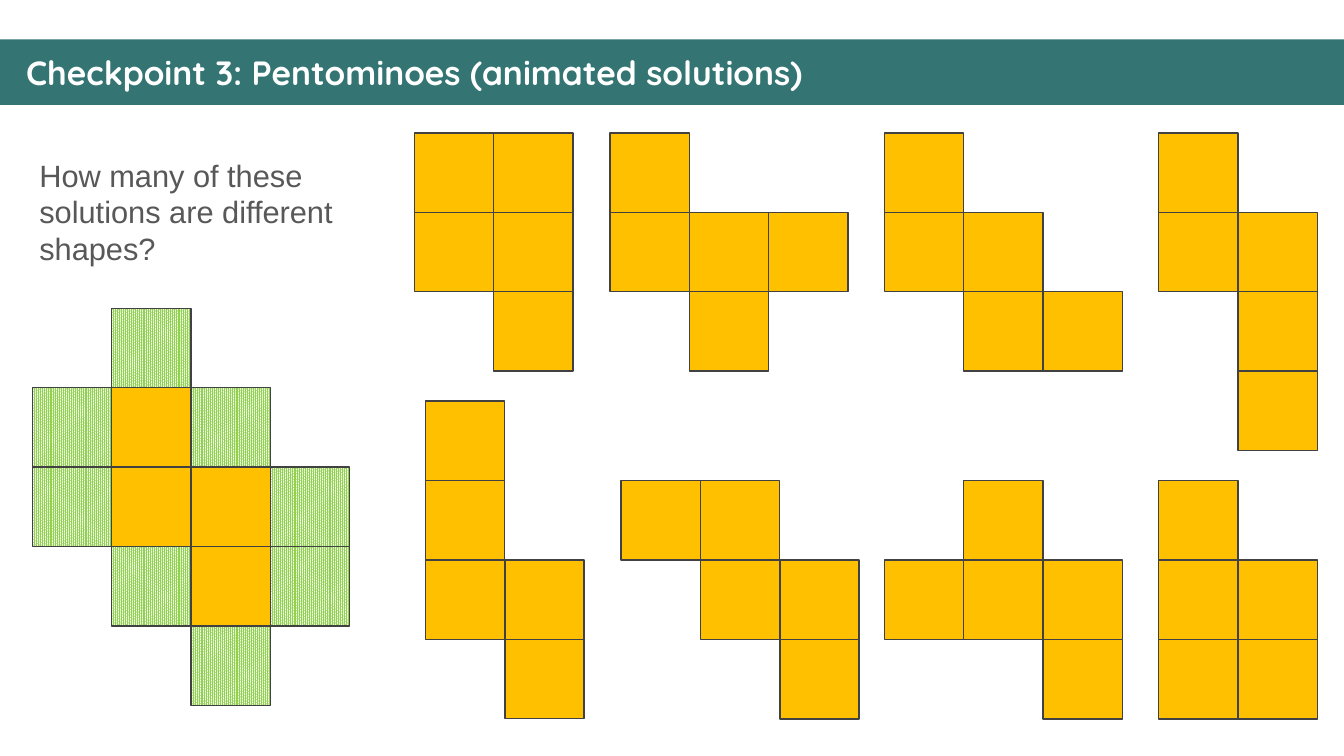
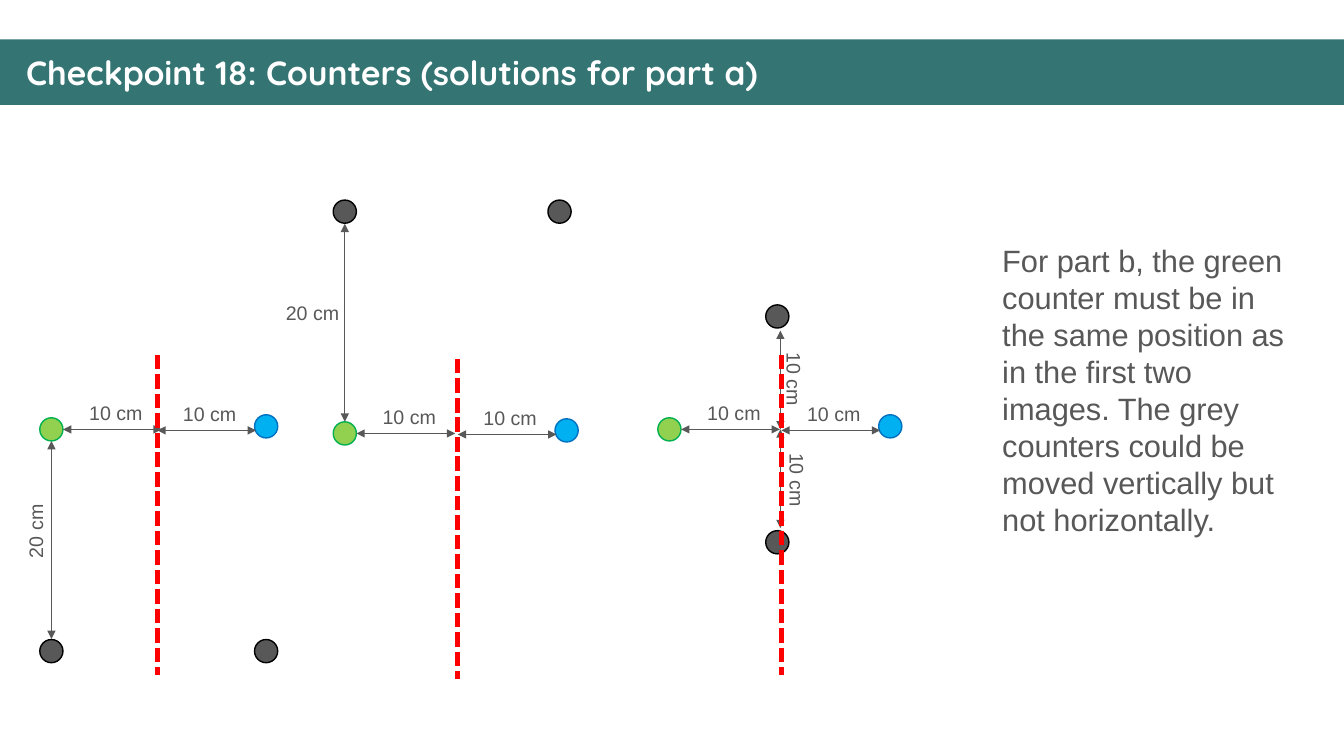
from lxml import etree
from pptx import Presentation
from pptx.dml.color import RGBColor
from pptx.enum.dml import MSO_LINE, MSO_PATTERN
from pptx.enum.shapes import MSO_CONNECTOR, MSO_SHAPE
from pptx.enum.text import MSO_ANCHOR, MSO_AUTO_SIZE, PP_ALIGN
from pptx.oxml.ns import qn
from pptx.util import Cm, Inches, Pt

RECTANGLE, OVAL = MSO_SHAPE.RECTANGLE, MSO_SHAPE.OVAL
STRAIGHT = MSO_CONNECTOR.STRAIGHT
SHORT_DASH = MSO_LINE.SQUARE_DOT
DENSE_DOTS = MSO_PATTERN.PERCENT_90
NO_FIT = MSO_AUTO_SIZE.NONE
MIDDLE, TOP = MSO_ANCHOR.MIDDLE, MSO_ANCHOR.TOP
LEFT, CENTER = PP_ALIGN.LEFT, PP_ALIGN.CENTER

TEAL = RGBColor(0x34, 0x75, 0x74)
WHITE = RGBColor(0xFF, 0xFF, 0xFF)
GREY = RGBColor(0x58, 0x58, 0x58)
BLACK = RGBColor(0x00, 0x00, 0x00)
EDGE = RGBColor(0x41, 0x41, 0x41)
AMBER = RGBColor(0xFF, 0xC0, 0x00)
LIME = RGBColor(0x92, 0xD0, 0x50)
GREEN = RGBColor(0x00, 0xB0, 0x50)
SKY = RGBColor(0x00, 0xB0, 0xF0)
BLUE = RGBColor(0x00, 0x70, 0xC0)
RED = RGBColor(0xFF, 0x00, 0x00)

TITLE_FONT = {"name": "Quicksand", "size": Pt(24), "bold": True}
BODY_FONT = {"name": "Arial", "size": Pt(22)}
LABEL_FONT = {"name": "Arial", "size": Pt(14)}

WIDTH, HEIGHT = 13.33, 7.5
CELL = Cm(2)
COUNTER = 0.23      # counter diameter
REACH = 0.98        # length of a 10 cm arrow
GAP = 0.115         # from a counter's centre to the arrow beside it
PAIR = 2.13         # distance between the two grey counters

# Each solution: left, top, and rows of cells (Y solid, g patterned)
CANDIDATES = (0.32, 3.06, (".g", "gYg", "gYYg", ".gYg", "..g"))
SOLUTIONS = [
    (4.11, 1.32, ("YY", "YY", ".Y")),
    (6.05, 1.32, ("Y", "YYY", ".Y")),
    (8.77, 1.32, ("Y", "YY", ".YY")),
    (11.49, 1.32, ("Y", "YY", ".Y", ".Y")),
    (4.22, 3.98, ("Y", "Y", "YY", ".Y")),
    (6.16, 4.77, ("YY", ".YY", "..Y")),
    (8.77, 4.77, (".Y", "YYY", "..Y")),
    (11.49, 4.77, ("Y", "YY", "YY")),
]


def place(item, left, top, width, height):
    item.left, item.top = Inches(left), Inches(top)
    item.width, item.height = Inches(width), Inches(height)


def write(box, text, font_format, color, align=LEFT, anchor=TOP, wrap=True):
    """Set the single paragraph of a box or placeholder."""
    frame = box.text_frame
    frame.text = text
    frame.auto_size = NO_FIT
    frame.word_wrap = wrap
    frame.vertical_anchor = anchor
    para = frame.paragraphs[0]
    para.alignment = align
    para.space_before = Pt(0)
    font = para.runs[0].font
    for name, value in font_format.items():
        setattr(font, name, value)
    font.color.rgb = color


def add_page(deck, title, text, text_place):
    """Start a slide with its title band and one unbulleted body text."""
    page = deck.slides.add_slide(deck.slide_layouts[1])
    band, body = page.placeholders
    place(band, 0, 0.39, WIDTH, 0.65)
    band.fill.solid()
    band.fill.fore_color.rgb = TEAL
    write(band, title, TITLE_FONT, WHITE, anchor=MIDDLE)
    band.text_frame.margin_left = Inches(0.26)

    place(body, *text_place)
    write(body, text, BODY_FONT, GREY)
    properties = body.text_frame.paragraphs[0]._p.get_or_add_pPr()
    properties.set("marL", "0")
    properties.set("indent", "0")
    etree.SubElement(properties, qn("a:buNone"))
    return page


def outline(shape, color):
    shape.shadow.inherit = False
    shape.line.color.rgb = color
    shape.line.width = Pt(1)


def add_cells(page, left, top, rows):
    """Draw the marked cells of a square grid."""
    for row, marks in enumerate(rows):
        for column, mark in enumerate(marks):
            if mark == ".":
                continue
            cell = page.shapes.add_shape(
                RECTANGLE, Inches(left) + column * CELL,
                Inches(top) + row * CELL, CELL, CELL)
            outline(cell, EDGE)
            if mark == "Y":
                cell.fill.solid()
                cell.fill.fore_color.rgb = AMBER
            else:
                cell.fill.patterned()
                cell.fill.pattern = DENSE_DOTS
                cell.fill.fore_color.rgb = LIME
                cell.fill.back_color.rgb = WHITE


def add_counter(page, x, y, fill=GREY, edge=BLACK):
    """Draw a counter centred on a point."""
    counter = page.shapes.add_shape(
        OVAL, Inches(x - COUNTER / 2), Inches(y - COUNTER / 2),
        Inches(COUNTER), Inches(COUNTER))
    counter.fill.solid()
    counter.fill.fore_color.rgb = fill
    outline(counter, edge)


def add_line(page, x1, y1, x2, y2, color, weight):
    line = page.shapes.add_connector(
        STRAIGHT, Inches(x1), Inches(y1), Inches(x2), Inches(y2))
    line.line.color.rgb = color
    line.line.width = Pt(weight)
    etree.SubElement(line._element.spPr, qn("a:effectLst"))
    return line


def add_measure(page, x1, y1, x2, y2):
    """Draw a thin arrow with a head at both ends."""
    arrow = add_line(page, x1, y1, x2, y2, GREY, 0.5)
    stroke = arrow._element.spPr.find(qn("a:ln"))
    for end in ("a:headEnd", "a:tailEnd"):
        etree.SubElement(stroke, qn(end), type="triangle")


def add_label(page, text, x, y, rotation=0):
    """Write a distance centred on a point."""
    width, height = 0.73, 0.34
    box = page.shapes.add_textbox(
        Inches(x - width / 2), Inches(y - height / 2),
        Inches(width), Inches(height))
    write(box, text, LABEL_FONT, GREY, CENTER, MIDDLE, wrap=False)
    box.rotation = rotation


def add_mirror_pair(page, green, mirror, y):
    """Draw the green and blue counters on either side of the mirror line."""
    add_counter(page, green, y, LIME, GREEN)
    add_measure(page, green + GAP, y, green + GAP + REACH, y)
    add_label(page, "10 cm", green + 0.64, y - 0.17)
    add_counter(page, mirror + 1.08, y - 0.03, SKY, BLUE)
    dashes = add_line(page, mirror, y - 0.74, mirror, y + 2.44, RED, 3.5)
    dashes.line.dash_style = SHORT_DASH
    add_measure(page, mirror, y + 0.01, mirror + REACH, y + 0.01)
    add_label(page, "10 cm", mirror + 0.52, y - 0.16)


def add_grey_row(page, green, y, side):
    """Draw two grey counters 20 cm below (1) or above (-1) the pair."""
    for x in (green, green + PAIR):
        add_counter(page, x, y + side * 2.2)
    add_measure(page, green, y + side * 2.08, green, y + side * GAP)


def add_grey_column(page, mirror, y):
    """Draw grey counters 10 cm above and below, on the mirror line."""
    for side, label_shift in ((-1, 0.14), (1, 0.17)):
        add_counter(page, mirror - 0.03, y + side * 1.12)
        add_measure(page, mirror, y + side * REACH, mirror, y)
        add_label(page, "10 cm", mirror + label_shift, y + side * 0.5, 90)


def build_pentominoes(deck):
    page = add_page(
        deck, "Checkpoint 3: Pentominoes (animated solutions)",
        "How many of these solutions are different shapes?",
        (0.29, 1.5, 3.2, 1.21))
    for solution in (CANDIDATES, *SOLUTIONS):
        add_cells(page, *solution)


def build_counters(deck):
    page = add_page(
        deck, "Checkpoint 18: Counters (solutions for part a)",
        "For part b, the green counter must be in the same position as in "
        "the first two images. The grey counters could be moved vertically "
        "but not horizontally.",
        (9.84, 2.35, 3.21, 3.06))
    # Grey counters below
    add_grey_row(page, 0.51, 4.26, 1)
    add_label(page, "20 cm", 0.35, 5.27, 270)
    add_mirror_pair(page, 0.51, 1.56, 4.26)
    # Grey counters above
    add_grey_row(page, 3.42, 4.3, -1)
    add_label(page, "20 cm", 3.1, 3.1)
    add_mirror_pair(page, 3.42, 4.54, 4.3)
    # Grey counters on the mirror line
    add_grey_column(page, 7.74, 4.26)
    add_mirror_pair(page, 6.64, 7.75, 4.26)


def main():
    deck = Presentation()
    deck.slide_width, deck.slide_height = Inches(WIDTH), Inches(HEIGHT)
    build_pentominoes(deck)
    build_counters(deck)
    deck.save("out.pptx")


if __name__ == "__main__":
    main()
